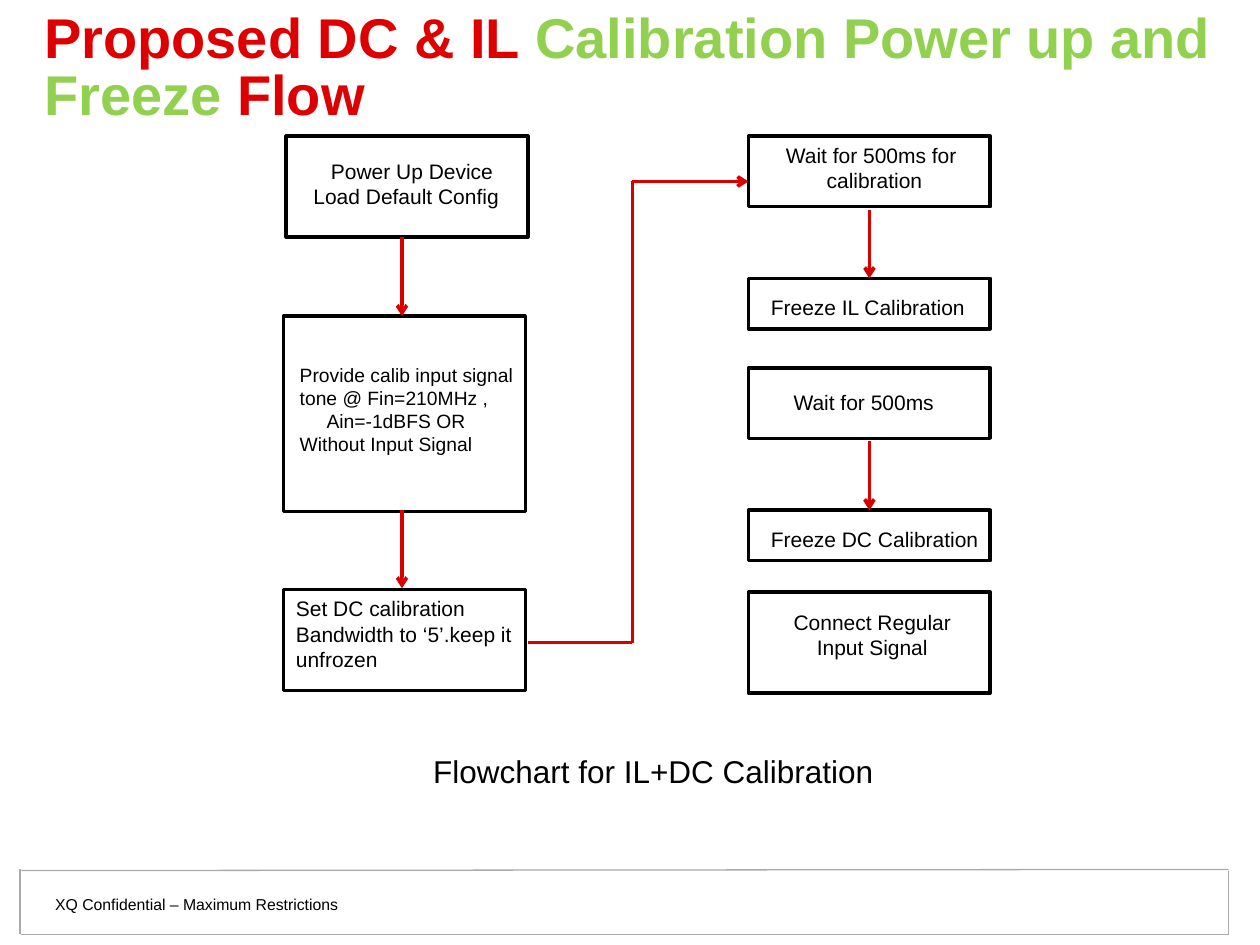
"""Build the calibration power up and freeze flowchart slide."""
import pptx
import pptx.util
import pptx.dml.color
import pptx.enum.shapes
import pptx.enum.text
import pptx.oxml.ns
from lxml import etree

Pt = pptx.util.Pt
BLACK, RED, GREEN, GREY = "000000", "DE0000", "92D050", "AAAAAA"
ARROW = "D90000"
WIDE = 138.2
LEFT, RIGHT = 162, 427.7
MID_L, MID_R, TURN = 229.7, 496.8, 361.4


def paint(code):
    """Turn a hex string into a colour."""
    return pptx.dml.color.RGBColor.from_string(code)


def style(run, size, color, bold=False):
    """Format one run of text."""
    font = run.font
    font.name, font.size, font.bold = "Arial", Pt(size), bold
    font.color.rgb = paint(color)


def text(slide, words, x, y, w, h, size=12, color=BLACK, indents=None):
    """Add a text box with one paragraph a line, each with its indent."""
    frame = slide.shapes.add_textbox(Pt(x), Pt(y), Pt(w), Pt(h)).text_frame
    frame.word_wrap = True
    lines = words.split("\n")
    for i, (line, gap) in enumerate(zip(lines, indents or [0] * len(lines))):
        para = frame.paragraphs[0] if i == 0 else frame.add_paragraph()
        if gap:
            props = para._p.get_or_add_pPr()
            props.set("marL", str(Pt(gap)))
            props.set("indent", "0")
        run = para.add_run()
        run.text = line
        style(run, size, color)


def box(slide, x, y, w, h, fill=None, line=BLACK):
    """Add a rectangle with an optional fill and outline."""
    shape = slide.shapes.add_shape(
        pptx.enum.shapes.MSO_SHAPE.RECTANGLE, Pt(x), Pt(y), Pt(w), Pt(h))
    shape.shadow.inherit = False
    if fill:
        shape.fill.solid()
        shape.fill.fore_color.rgb = paint(fill)
    else:
        shape.fill.background()
    if line:
        shape.line.color.rgb = paint(line)
        shape.line.width = Pt(2)
    else:
        shape.line.fill.background()


def link(slide, x1, y1, x2, y2, color=ARROW, width=2, head=False):
    """Add a straight line, with an arrowhead at its end if asked."""
    line = slide.shapes.add_connector(
        pptx.enum.shapes.MSO_CONNECTOR.STRAIGHT,
        Pt(x1), Pt(y1), Pt(x2), Pt(y2))
    line.line.color.rgb = paint(color)
    line.line.width = Pt(width)
    qn = pptx.oxml.ns.qn
    if head:
        etree.SubElement(line.line._get_or_add_ln(), qn("a:tailEnd"),
                         type="arrow")
    etree.SubElement(line._element.spPr, qn("a:effectLst"))


def title(slide):
    """Place and format the title in its three coloured parts."""
    shape = slide.shapes.title
    shape.left, shape.top = Pt(18), Pt(7.9)
    shape.width, shape.height = Pt(684), Pt(64)
    frame = shape.text_frame
    frame.word_wrap = True
    frame.auto_size = pptx.enum.text.MSO_AUTO_SIZE.NONE
    frame.vertical_anchor = pptx.enum.text.MSO_ANCHOR.MIDDLE
    para = frame.paragraphs[0]
    para.alignment = pptx.enum.text.PP_ALIGN.LEFT
    para.line_spacing = 0.85
    para.space_before = Pt(0)
    for words, color in (("Proposed DC & IL ", RED),
                         ("Calibration Power up and Freeze", GREEN),
                         (" Flow", RED)):
        run = para.add_run()
        run.text = words
        style(run, 32, color, bold=True)


def footer(slide):
    """Draw the framed footer and its label."""
    box(slide, 12.2, 498.2, 690, 36, fill="FFFFFF", line=None)
    for ends in ((12.2, 534.2, 702, 534.2), (12.2, 497.5, 702, 496.8),
                 (702, 534.2, 702, 497.5), (11.5, 533.5, 11.5, 496.8)):
        link(slide, *ends, color=GREY, width=0.75)
    text(slide, "XQ Confidential – Maximum Restrictions",
         24.5, 507.6, 199.4, 18, size=9)


def flow(slide):
    """Draw the steps, their labels and the arrows between them."""
    for x, y, h in ((LEFT + 1.5, 77.8, 57.6), (LEFT, 180.7, 111.6),
                    (LEFT, 337, 57.6), (RIGHT, 77.8, 40.3),
                    (RIGHT, 159.1, 28.8), (RIGHT, 210.2, 40.3),
                    (RIGHT, 291.6, 28.8), (RIGHT, 338.4, 57.6)):
        box(slide, x, y, WIDE, h)
    for x, y1, y2 in ((MID_L, 135.4, 180.7), (MID_L, 291.6, 336.2),
                      (MID_R, 120.2, 159.1), (MID_R, 252, 291.6)):
        link(slide, x, y1, x, y2, head=True)
    link(slide, 301.7, 367.2, TURN, 367.2)
    link(slide, TURN, 103.7, TURN, 367.2)
    link(slide, TURN, 103.7, RIGHT, 103.7, head=True)

    text(slide, "Power Up Device\nLoad Default Config",
         172, 87.1, 121, 39, indents=(10, 0))
    text(slide, "Provide calib input signal\ntone @ Fin=210MHz ,\n"
         "Ain=-1dBFS OR\nWithout Input Signal",
         164.2, 203.8, 138, 65, size=11, indents=(0, 0, 15.3, 0))
    text(slide, "Set DC calibration\nBandwidth to ‘5’.keep it\nunfrozen",
         162, 337, 142, 54)
    text(slide, "Wait for 500ms for\ncalibration",
         442, 77.8, 114, 39, indents=(0, 23.3))
    text(slide, "Freeze IL Calibration", 433.4, 164.9, 126, 21.6)
    text(slide, "Wait for 500ms", 446.4, 219.2, 97, 21.6)
    text(slide, "Freeze DC Calibration", 433.4, 297.4, 134.5, 21.6)
    text(slide, "Connect Regular\nInput Signal",
         446.4, 344.9, 106, 39, indents=(0, 13.3))
    text(slide, "Flowchart for IL+DC Calibration",
         240.5, 426.2, 269, 29, size=18)


def main():
    """Build and save the slide."""
    deck = pptx.Presentation()
    deck.slide_width, deck.slide_height = Pt(720), Pt(540)
    slide = deck.slides.add_slide(deck.slide_layouts[5])
    footer(slide)
    title(slide)
    flow(slide)
    deck.save("out.pptx")


if __name__ == "__main__":
    main()
